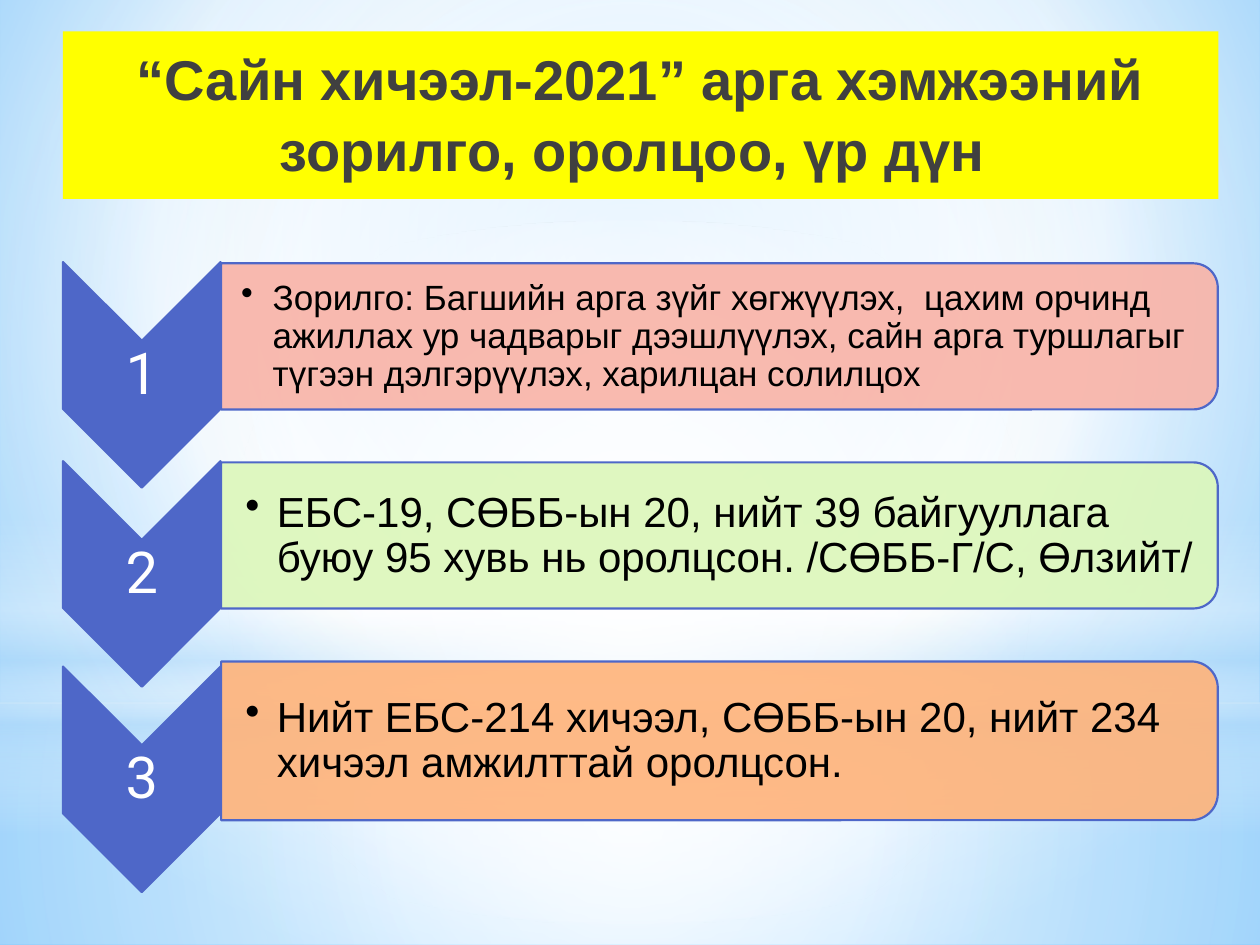
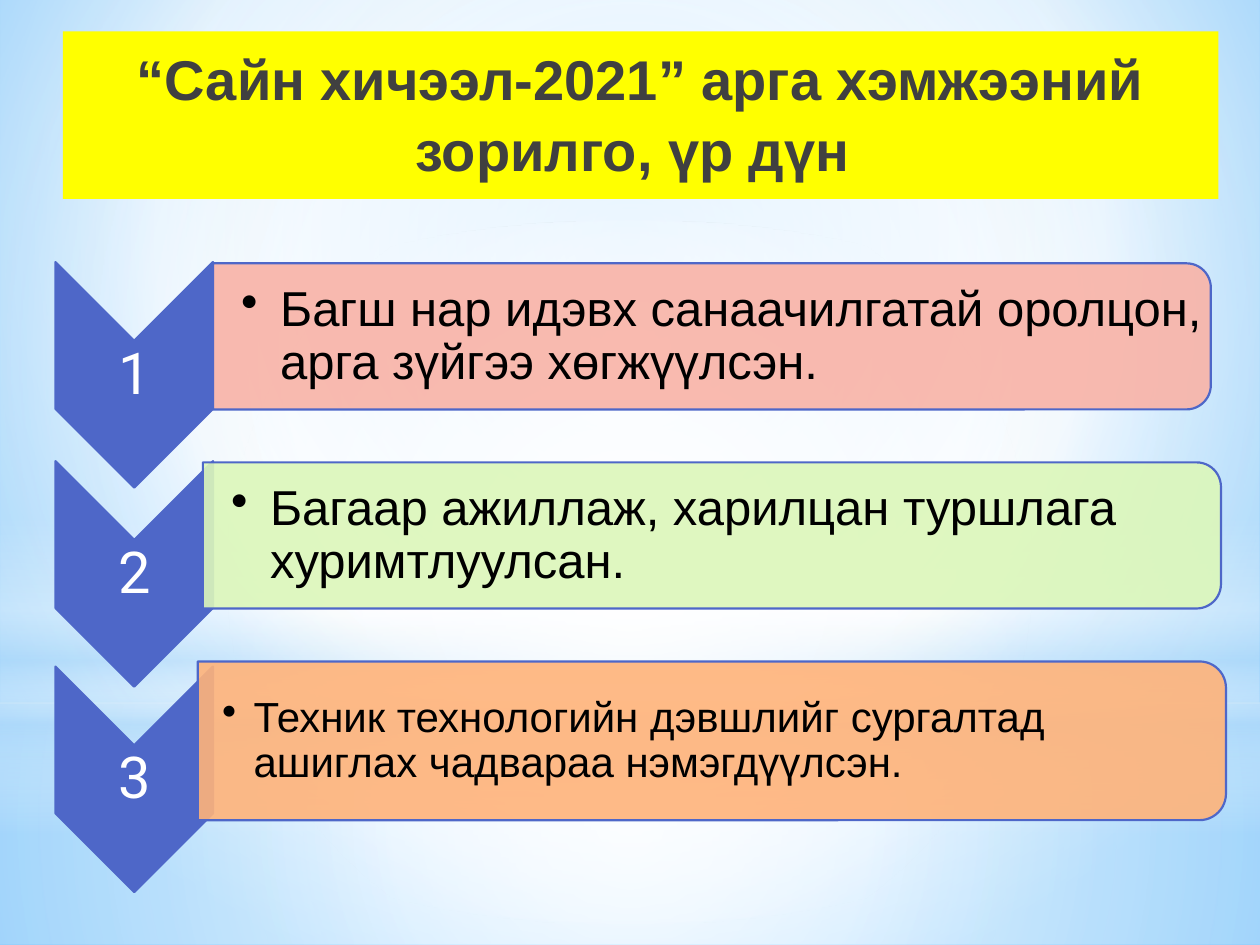
from dataclasses import dataclass
from typing import Any, NamedTuple, Optional

from lxml.etree import SubElement
from pptx import Presentation
from pptx.dml.color import RGBColor
from pptx.enum.shapes import MSO_SHAPE
from pptx.enum.text import MSO_ANCHOR, PP_ALIGN
from pptx.oxml.ns import qn
from pptx.util import Inches, Pt

INDIGO = "4E67C8"
YELLOW = "FFFF00"
WHITE = "FFFFFF"
BLACK = "000000"
CHARCOAL = "404040"
PALE_BLUE = "B4DCFA"

CHEVRON_WIDTH, CHEVRON_HEIGHT = 1.25, 1.79
PANEL_CENTER_OFFSET = 5.21
PANEL_OPACITY = 90


class Box(NamedTuple):
    left: float
    top: float
    width: float
    height: float

    def lengths(self) -> list[int]:
        return [Inches(value) for value in self]


class Stop(NamedTuple):
    position: int
    color: str
    opacity: int = 100


@dataclass(frozen=True)
class Gradient:
    """Runs to the focus rectangle (left, top, right, bottom), or downwards without one."""
    stops: list[Stop]
    focus: Optional[tuple[int, int, int, int]] = None


@dataclass(frozen=True)
class Layer:
    preset: MSO_SHAPE
    box: Box
    gradient: Gradient


@dataclass(frozen=True)
class Tier:
    chevron_top: float
    panel_top: float
    panel_height: float
    color: str


@dataclass(frozen=True)
class Point:
    text: str
    size: int
    panel_width: float


@dataclass(frozen=True)
class ChevronList:
    title: str
    left: float
    points: list[Point]


CENTER = (50, 50, 50, 50)
SKY = Gradient([Stop(0, "9ED5FF"), Stop(60, WHITE), Stop(100, "5BB9FF")], (20, 10, 20, 60))
LAYERS = [
    Layer(MSO_SHAPE.RECTANGLE, Box(0, 5.58, 10, 1.92), Gradient(
        [Stop(0, WHITE, 91), Stop(37, WHITE, 76), Stop(100, PALE_BLUE, 79)], CENTER)),
    Layer(MSO_SHAPE.RECTANGLE, Box(0, 0, 10, 5.58), Gradient(
        [Stop(0, WHITE, 89), Stop(48, WHITE, 62), Stop(100, PALE_BLUE, 79)], CENTER)),
    Layer(MSO_SHAPE.RECTANGLE, Box(0, 4.12, 10, 2.5), Gradient(
        [Stop(0, WHITE, 0), Stop(29, WHITE, 30), Stop(45, PALE_BLUE, 40),
         Stop(55, WHITE, 26), Stop(65, PALE_BLUE, 60), Stop(100, WHITE, 0)])),
    Layer(MSO_SHAPE.OVAL, Box(0, 1.75, 10, 5.58), Gradient(
        [Stop(0, WHITE), Stop(56, WHITE, 0)], CENTER)),
]
TIERS = [
    Tier(2.08, 2.09, 1.16, "F9B3A7"),
    Tier(3.66, 3.67, 1.16, "DCF7BA"),
    Tier(5.29, 5.25, 1.26, "FFB37A"),
]
CHEVRON_LISTS = [
    ChevronList("“Сайн хичээл-2021” арга хэмжээний зорилго, оролцоо, үр дүн ", 0.5, [
        Point("Зорилго: Багшийн арга зүйг хөгжүүлэх,  цахим орчинд ажиллах ур чадварыг "
              "дээшлүүлэх, сайн арга туршлагыг түгээн дэлгэрүүлэх, харилцан солилцох", 20, 7.91),
        Point("ЕБС-19, СӨББ-ын 20, нийт 39 байгууллага буюу 95 хувь нь оролцсон. "
              "/СӨББ-Г/С, Өлзийт/", 24, 7.91),
        Point("Нийт ЕБС-214 хичээл, СӨББ-ын 20, нийт 234 хичээл амжилттай оролцсон.", 24, 7.91),
    ]),
    ChevronList("“Сайн хичээл-2021” арга хэмжээний зорилго, үр дүн ", 0.44, [
        Point("Багш нар идэвх санаачилгатай оролцон, арга зүйгээ хөгжүүлсэн.", 28, 7.92),
        Point("Багаар ажиллаж, харилцан туршлага хуримтлуулсан.", 28, 8.08),
        Point("Техник технологийн дэвшлийг сургалтад ашиглах чадвараа нэмэгдүүлсэн.", 24, 8.16),
    ]),
]


def rgb(color: str) -> RGBColor:
    return RGBColor.from_string(color)


def add_alpha(color_element: Any, opacity: int) -> None:
    SubElement(color_element, qn("a:alpha"), val=str(opacity * 1000))


def set_gradient(owner: Any, fill: Any, gradient: Gradient) -> None:
    fill.gradient()
    element = owner.element.find(f".//{qn('a:gradFill')}")
    for child in list(element):
        element.remove(child)
    stop_list = SubElement(element, qn("a:gsLst"))
    for stop in gradient.stops:
        entry = SubElement(stop_list, qn("a:gs"), pos=str(stop.position * 1000))
        color = SubElement(entry, qn("a:srgbClr"), val=stop.color)
        if stop.opacity < 100:
            add_alpha(color, stop.opacity)
    if gradient.focus:
        radial = SubElement(element, qn("a:path"), path="circle")
        edges = {side: str(value * 1000) for side, value in zip("ltrb", gradient.focus)}
        SubElement(radial, qn("a:fillToRect"), **edges)
    else:
        SubElement(element, qn("a:lin"), ang="5400000", scaled="0")


def add_plain_shape(slide: Any, preset: MSO_SHAPE, box: Box) -> Any:
    shape = slide.shapes.add_shape(preset, *box.lengths())
    shape.shadow.inherit = False
    shape.line.fill.background()
    return shape


def add_turned_shape(slide: Any, preset: MSO_SHAPE, box: Box, color: str,
                     opacity: int = 100) -> None:
    """Add a shape turned by 90 degrees that covers the given box once turned."""
    shift = (box.width - box.height) / 2
    unturned = Box(box.left + shift, box.top - shift, box.height, box.width)
    shape = add_plain_shape(slide, preset, unturned)
    shape.rotation = 90
    shape.fill.solid()
    shape.fill.fore_color.rgb = rgb(color)
    if opacity < 100:
        add_alpha(shape.element.spPr.find(f".//{qn('a:srgbClr')}"), opacity)
    shape.line.color.rgb = rgb(INDIGO)
    shape.line.width = Pt(1.25)


def write_text(shape: Any, text: str, margins: tuple[float, float, float, float],
               font: dict[str, Any], color: str, anchor: MSO_ANCHOR = MSO_ANCHOR.MIDDLE,
               alignment: PP_ALIGN = PP_ALIGN.CENTER, spacing: float = 0.9,
               hanging: float = 0) -> None:
    """Fill a shape with one paragraph, bulleted when a hanging indent is given."""
    frame = shape.text_frame
    frame.word_wrap = True
    frame.vertical_anchor = anchor
    for side, margin in zip(("left", "top", "right", "bottom"), margins):
        setattr(frame, f"margin_{side}", Inches(margin))
    paragraph = frame.paragraphs[0]
    paragraph.alignment = alignment
    paragraph.line_spacing = spacing
    if hanging:
        properties = paragraph._p.get_or_add_pPr()
        properties.set("marL", str(Inches(hanging)))
        properties.set("indent", str(-Inches(hanging)))
        SubElement(properties, qn("a:buChar"), char="•")
    run = paragraph.add_run()
    run.text = text
    for name, value in font.items():
        setattr(run.font, name, value)
    run.font.color.rgb = rgb(color)


def add_backdrop(slide: Any) -> None:
    set_gradient(slide, slide.background.fill, SKY)
    for layer in LAYERS:
        shape = add_plain_shape(slide, layer.preset, layer.box)
        set_gradient(shape, shape.fill, layer.gradient)


def add_title(slide: Any, title: str) -> None:
    band = add_plain_shape(slide, MSO_SHAPE.RECTANGLE, Box(0.5, 0.25, 9.17, 1.33))
    band.fill.solid()
    band.fill.fore_color.rgb = rgb(YELLOW)
    write_text(band, title, (0.1, 0.07, 0.1, 0.05),
               {"name": "Arial", "size": Pt(32), "bold": True}, CHARCOAL,
               anchor=MSO_ANCHOR.TOP, spacing=1.06)


def add_tier(slide: Any, number: int, left: float, tier: Tier, point: Point) -> None:
    add_turned_shape(slide, MSO_SHAPE.CHEVRON,
                     Box(left, tier.chevron_top, CHEVRON_WIDTH, CHEVRON_HEIGHT), INDIGO)
    number_box = Box(left, tier.chevron_top + 0.63, CHEVRON_WIDTH, 0.54)
    write_text(slide.shapes.add_textbox(*number_box.lengths()), str(number), (0.02,) * 4,
               {"name": "Roboto", "size": Pt(33)}, WHITE)

    panel = Box(left + PANEL_CENTER_OFFSET - point.panel_width / 2, tier.panel_top,
                point.panel_width, tier.panel_height)
    add_turned_shape(slide, MSO_SHAPE.ROUND_2_SAME_RECTANGLE, panel, tier.color, PANEL_OPACITY)
    text_box = Box(panel.left, panel.top + 0.06, panel.width - 0.05, panel.height - 0.11)
    write_text(slide.shapes.add_textbox(*text_box.lengths()), point.text,
               (point.size * 0.008, 0.02, 0.02, 0.02),
               {"name": "Arial", "size": Pt(point.size)}, BLACK,
               alignment=PP_ALIGN.LEFT, hanging=0.31 if point.size >= 28 else 0.25)


def main() -> None:
    presentation = Presentation()
    presentation.slide_width = Inches(10)
    presentation.slide_height = Inches(7.5)
    for chevron_list in CHEVRON_LISTS:
        slide = presentation.slides.add_slide(presentation.slide_layouts[6])
        add_backdrop(slide)
        add_title(slide, chevron_list.title)
        for number, (tier, point) in enumerate(zip(TIERS, chevron_list.points), start=1):
            add_tier(slide, number, chevron_list.left, tier, point)
    presentation.save("out.pptx")


if __name__ == "__main__":
    main()
